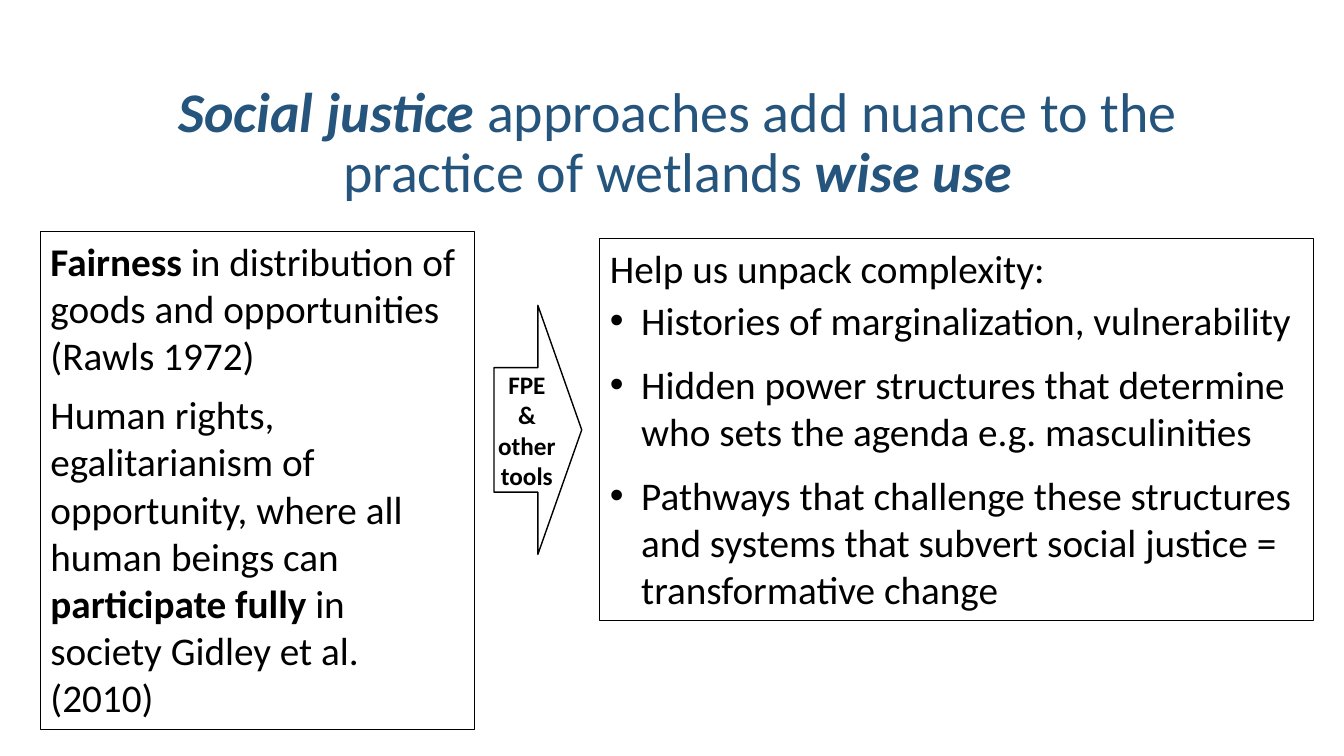
from lxml import etree
from pptx import Presentation
from pptx.dml.color import RGBColor
from pptx.enum.shapes import MSO_SHAPE
from pptx.enum.text import MSO_ANCHOR, MSO_AUTO_SIZE, PP_ALIGN
from pptx.oxml.ns import qn
from pptx.util import Inches, Pt

NAVY = RGBColor(0x25, 0x54, 0x7D)
BLACK = RGBColor(0, 0, 0)
FONT = "Calibri"
CENTER = PP_ALIGN.CENTER
TOP, MIDDLE = MSO_ANCHOR.TOP, MSO_ANCHOR.MIDDLE
NO_FIT = MSO_AUTO_SIZE.NONE
RIGHT_ARROW = MSO_SHAPE.RIGHT_ARROW
TWO_CONTENT = 3
HANGING = Inches(0.31)

TITLE = [("Social justice ", True),
         ("approaches add nuance to the practice of wetlands ", False),
         ("wise use", True)]
# Each paragraph: spans as (text, bold), space after in points, bulleted
FAIRNESS = [
    ([("Fairness", True),
      (" in distribution of goods and opportunities (Rawls 1972)", False)], 9, False),
    ([("Human rights, egalitarianism of opportunity, where all human beings can ", False),
      ("participate fully ", True),
      ("in society Gidley et al. (2010)", False)], 0, False),
]
COMPLEXITY = [
    ([("Help us unpack complexity:", False)], 4, False),
    ([("Histories of marginalization, vulnerability", False)], 12, True),
    ([("Hidden power structures that determine who sets the agenda "
       "e.g. masculinities", False)], 12, True),
    ([("Pathways that challenge these structures and systems that subvert "
       "social justice = transformative change", False)], 4, True),
]


def place(shape, box):
    shape.left, shape.top, shape.width, shape.height = [Inches(length) for length in box]


def outline(shape, width):
    shape.fill.background()
    shape.line.color.rgb = BLACK
    shape.line.width = Pt(width)


def add_span(para, text, size, color, bold, italic=False):
    span = para.add_run()
    span.text = text
    font = span.font
    font.name, font.size, font.bold, font.italic = FONT, Pt(size), bold, italic
    font.color.rgb = color


def set_bullet(para, bulleted):
    properties = para._p.get_or_add_pPr()
    properties.set("marL", str(HANGING if bulleted else 0))
    properties.set("indent", str(-HANGING if bulleted else 0))
    if bulleted:
        etree.SubElement(properties, qn("a:buFont")).set("typeface", "Arial")
        etree.SubElement(properties, qn("a:buChar")).set("char", "•")
    else:
        etree.SubElement(properties, qn("a:buNone"))


def fill_title(title, box):
    place(title, box)
    frame = title.text_frame
    frame.auto_size, frame.vertical_anchor = NO_FIT, MIDDLE
    para = frame.paragraphs[0]
    para.alignment, para.line_spacing, para.space_after = CENTER, 0.9, Pt(6)
    for text, stressed in TITLE:
        add_span(para, text, 40, NAVY, stressed, stressed)


def fill_panel(panel, box, content):
    place(panel, box)
    outline(panel, 0.75)
    frame = panel.text_frame
    frame.auto_size, frame.vertical_anchor = NO_FIT, TOP
    for index, (spans, space_after, bulleted) in enumerate(content):
        para = frame.add_paragraph() if index else frame.paragraphs[0]
        set_bullet(para, bulleted)
        para.space_before, para.space_after = Pt(0), Pt(space_after)
        for text, bold in spans:
            add_span(para, text, 28, BLACK, bold)


def add_tools_arrow(page, box):
    arrow = page.shapes.add_shape(RIGHT_ARROW, *[Inches(length) for length in box])
    arrow.shadow.inherit = False
    outline(arrow, 1)
    frame = arrow.text_frame
    frame.word_wrap, frame.vertical_anchor = True, MIDDLE
    frame.margin_left = frame.margin_right = Inches(0.04)
    frame.margin_top = frame.margin_bottom = Inches(0.08)
    para = frame.paragraphs[0]
    para.alignment = CENTER
    add_span(para, "FPE & other tools", 18, BLACK, True)


def main():
    deck = Presentation()
    deck.slide_width, deck.slide_height = Inches(13.33), Inches(7.5)
    page = deck.slides.add_slide(deck.slide_layouts[TWO_CONTENT])
    title, fairness, complexity = page.placeholders
    fill_title(title, (0.97, 0.78, 11.5, 1.31))
    fill_panel(fairness, (0.4, 2.3, 4.31, 4.94), FAIRNESS)
    fill_panel(complexity, (5.95, 2.37, 7.08, 3.79), COMPLEXITY)
    add_tools_arrow(page, (4.9, 3.03, 0.87, 2.47))
    deck.save("out.pptx")


if __name__ == "__main__":
    main()
